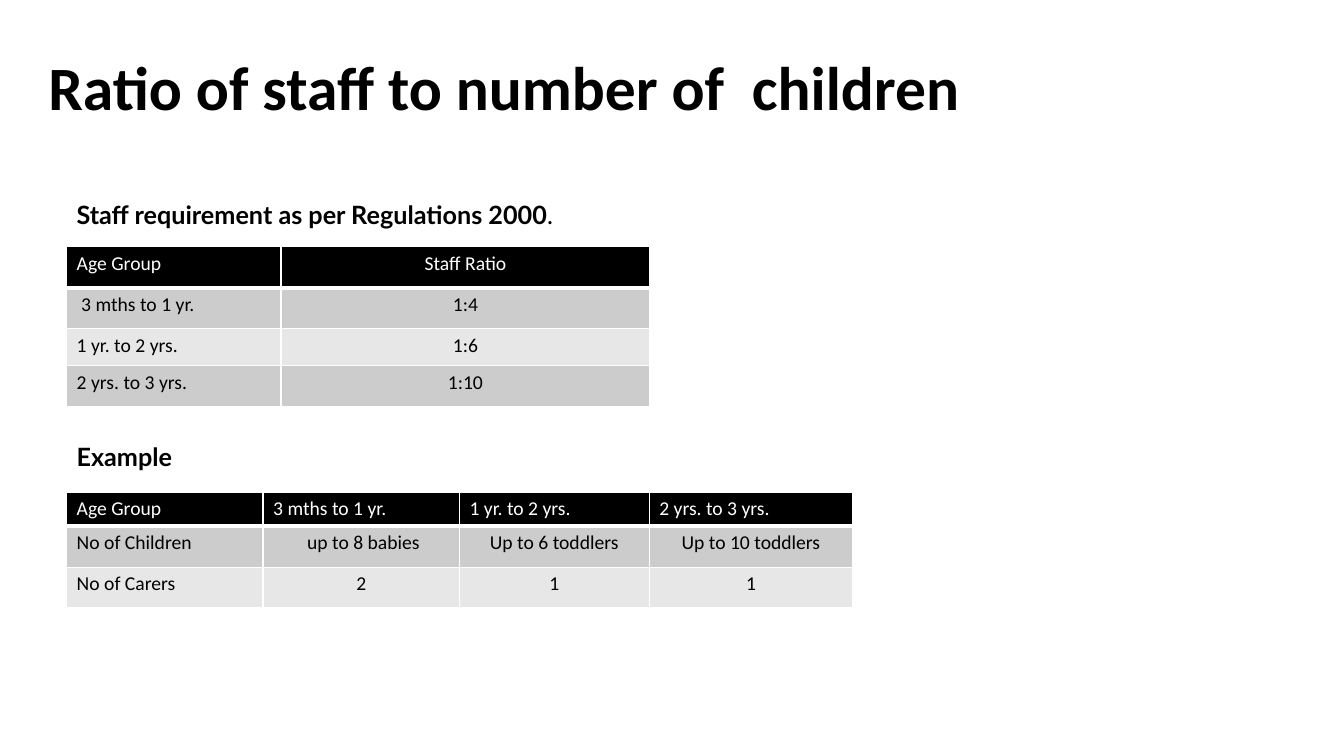
from lxml.etree import SubElement
from pptx import Presentation
from pptx.dml.color import RGBColor
from pptx.enum.text import MSO_ANCHOR as Anchor, PP_ALIGN as Align
from pptx.oxml.ns import qn
from pptx.util import Cm, Pt

BLACK = RGBColor(0x00, 0x00, 0x00)
WHITE = RGBColor(0xFF, 0xFF, 0xFF)
GREY = RGBColor(0xCC, 0xCC, 0xCC)
PALE = RGBColor(0xE7, 0xE7, 0xE7)

LEFT = 1.68
STAFF_RATIOS = [
    ["Age Group", "Staff Ratio"],
    [" 3 mths to 1 yr.", "1:4"],
    ["1 yr. to 2 yrs.", "1:6"],
    ["2 yrs. to 3 yrs.", "1:10"],
]
EXAMPLE = [
    ["Age Group", "3 mths to 1 yr.", "1 yr. to 2 yrs.", "2 yrs. to 3 yrs."],
    ["No of Children", " up to 8 babies", "Up to 6 toddlers", "Up to 10 toddlers"],
    ["No of Carers", "2", "1", "1"],
]


class RatioSlide:
    body_font = "Calibri"
    heading_font = "Lato"

    def __init__(self, deck):
        self.slide = deck.slides.add_slide(deck.slide_layouts[6])

    def style(self, paragraph, font, size, color=BLACK):
        paragraph.font.name = font
        paragraph.font.size = Pt(size)
        paragraph.font.color.rgb = color

    def text_box(self, left, top, width, height):
        frame = self.slide.shapes.add_textbox(
            Cm(left), Cm(top), Cm(width), Cm(height)).text_frame
        frame.word_wrap = True
        return frame

    def title(self, text):
        frame = self.text_box(0.97, 1.24, 31.22, 2.08)
        frame.vertical_anchor = Anchor.MIDDLE
        line = frame.paragraphs[0]
        line.text = text
        line.line_spacing = 0.9
        self.style(line, self.body_font, 44)
        line.font.bold = True

    def heading(self, top, text, ending=""):
        """Bold heading above a table, with an optional regular-weight ending."""
        line = self.text_box(LEFT, top, 30.5, 1.02).paragraphs[0]
        self.style(line, self.heading_font, 18)
        for part, bold in ((text, True), (ending, False)):
            if part:
                run = line.add_run()
                run.text = part
                run.font.bold = bold

    def borders(self, cell, bottom):
        """White cell edges, 1 pt except for the given bottom width."""
        properties = cell._tc.get_or_add_tcPr()
        for side, width in (("L", 1), ("R", 1), ("T", 1), ("B", bottom)):
            edge = SubElement(properties, qn(f"a:ln{side}"), w=str(Pt(width)))
            fill = SubElement(edge, qn("a:solidFill"))
            SubElement(fill, qn("a:srgbClr"), val=str(WHITE))

    def table(self, top, widths, heights, rows, centre_header):
        table = self.slide.shapes.add_table(
            len(rows), len(widths), Cm(LEFT), Cm(top),
            Cm(sum(widths)), Cm(sum(heights))).table
        table.first_row = table.horz_banding = False
        for column, width in zip(table.columns, widths):
            column.width = Cm(width)
        for r, (row, height) in enumerate(zip(rows, heights)):
            table.rows[r].height = Cm(height)
            header = r == 0
            for c, text in enumerate(row):
                cell = table.cell(r, c)
                self.borders(cell, 3 if header else 1)
                cell.fill.solid()
                cell.fill.fore_color.rgb = BLACK if header else (PALE, GREY)[r % 2]
                line = cell.text_frame.paragraphs[0]
                line.text = text
                centred = c > 0 and (centre_header or not header)
                line.alignment = Align.CENTER if centred else Align.LEFT
                self.style(line, self.body_font, 14, WHITE if header else BLACK)


def main():
    deck = Presentation()
    deck.slide_width, deck.slide_height = Cm(33.87), Cm(19.05)
    ratios = RatioSlide(deck)
    ratios.title("Ratio of staff to number of  children")
    ratios.heading(4.89, "Staff requirement as per Regulations 2000", ".")
    ratios.table(6.22, [5.4, 9.3], [1.03, 1.03, 0.94, 1.03], STAFF_RATIOS, True)
    ratios.heading(10.99, "Example")
    ratios.table(12.4, [4.95, 4.95, 4.78, 5.13], [0.86, 1.03, 1.03], EXAMPLE, False)
    deck.save("out.pptx")


if __name__ == "__main__":
    main()
